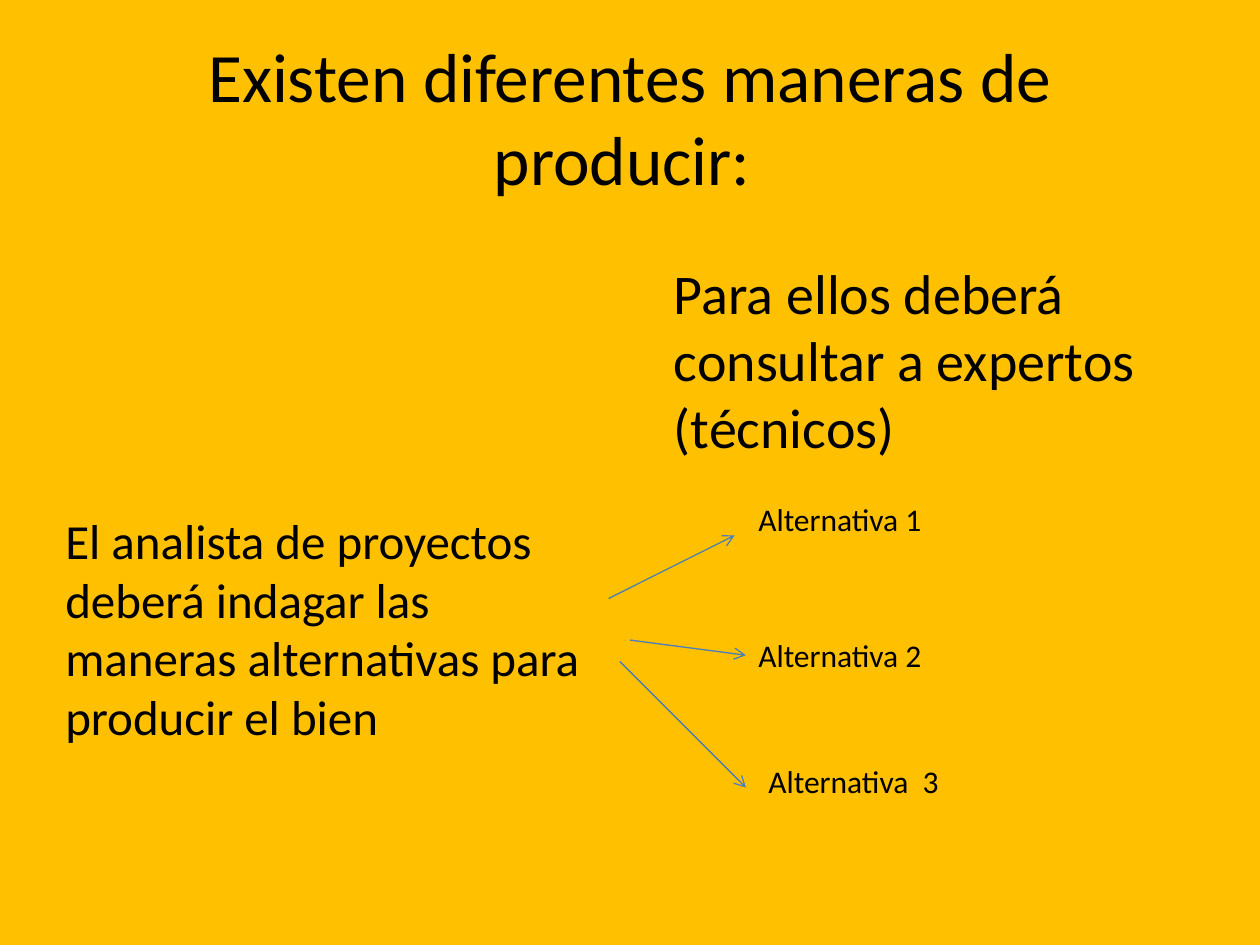
import pptx
import pptx.dml.color
import pptx.enum.shapes
import pptx.enum.text
import pptx.oxml
import pptx.oxml.ns
import pptx.util
from pptx.util import Inches

# Content
BACKGROUND, INK, ARROW = "FFC000", "000000", "4B7EBC"
FONT = "Calibri"
TITLE = "Existen diferentes maneras de producir: "
# text, size, (left, top, width, height)
STATEMENTS = [
    ("El analista de proyectos deberá indagar las maneras alternativas para producir el bien",
     28, (0.42, 4, 4.5, 1.99)),
    ("Para ellos deberá consultar a expertos (técnicos)",
     32, (5.25, 2, 4.25, 1.72)),
]
# text, (left, top), arrow start, arrow end (None: middle of the label's left side)
ALTERNATIVES = [
    ("Alternativa 1", (5.92, 3.92), (4.83, 4.75), (5.83, 4.25)),
    ("Alternativa 2", (5.92, 5), (5, 5.08), None),
    ("Alternativa  3", (6, 6), (4.92, 5.25), (5.92, 6.25)),
]
LABEL_SIZE, LABEL_WIDTH, LABEL_HEIGHT = 18, 2.25, 0.4


def set_color(color_format, value):
    color_format.rgb = pptx.dml.color.RGBColor.from_string(value)


def write(paragraph, text, size):
    run = paragraph.add_run()
    run.text = text
    run.font.name = FONT
    run.font.size = pptx.util.Pt(size)
    set_color(run.font.color, INK)


def add_text(slide, text, size, box):
    label = slide.shapes.add_textbox(*map(Inches, box))
    frame = label.text_frame
    frame.word_wrap = True
    frame.auto_size = pptx.enum.text.MSO_AUTO_SIZE.SHAPE_TO_FIT_TEXT
    write(frame.paragraphs[0], text, size)
    return label


def add_arrow(slide, start, end):
    arrow = slide.shapes.add_connector(
        pptx.enum.shapes.MSO_CONNECTOR.STRAIGHT, *map(Inches, (*start, *end)))
    arrow.line.width = pptx.util.Pt(0.75)
    arrow.line.fill.solid()
    set_color(arrow.line.fill.fore_color, ARROW)
    properties = arrow.line._get_or_add_ln()
    pptx.oxml.ns.qn("a:tailEnd")
    head = pptx.oxml.parse_xml(
        f'<a:tailEnd {pptx.oxml.ns.nsdecls("a")} type="arrow"/>')
    properties.append(head)
    no_shadow = pptx.oxml.parse_xml(f'<a:effectLst {pptx.oxml.ns.nsdecls("a")}/>')
    properties.getparent().append(no_shadow)
    return arrow


def main():
    deck = pptx.Presentation()
    deck.slide_width, deck.slide_height = Inches(10), Inches(7.5)
    slide = deck.slides.add_slide(deck.slide_layouts[5])
    slide.background.fill.solid()
    set_color(slide.background.fill.fore_color, BACKGROUND)

    # Title
    title = slide.shapes.title
    title.left, title.top, title.width, title.height = map(Inches, (0.5, 0.3, 9, 1.25))
    title.text_frame.vertical_anchor = pptx.enum.text.MSO_ANCHOR.MIDDLE
    heading = title.text_frame.paragraphs[0]
    heading.alignment = pptx.enum.text.PP_ALIGN.CENTER
    write(heading, TITLE, 39.6)

    # Statements
    for text, size, box in STATEMENTS:
        add_text(slide, text, size, box)

    # Alternatives, each with its arrow
    for text, (left, top), start, end in ALTERNATIVES:
        label = add_text(slide, text, LABEL_SIZE, (left, top, LABEL_WIDTH, LABEL_HEIGHT))
        arrow = add_arrow(slide, start, end or (left, top + LABEL_HEIGHT / 2))
        if end is None:
            arrow.end_connect(label, 1)

    deck.save("out.pptx")


if __name__ == "__main__":
    main()
